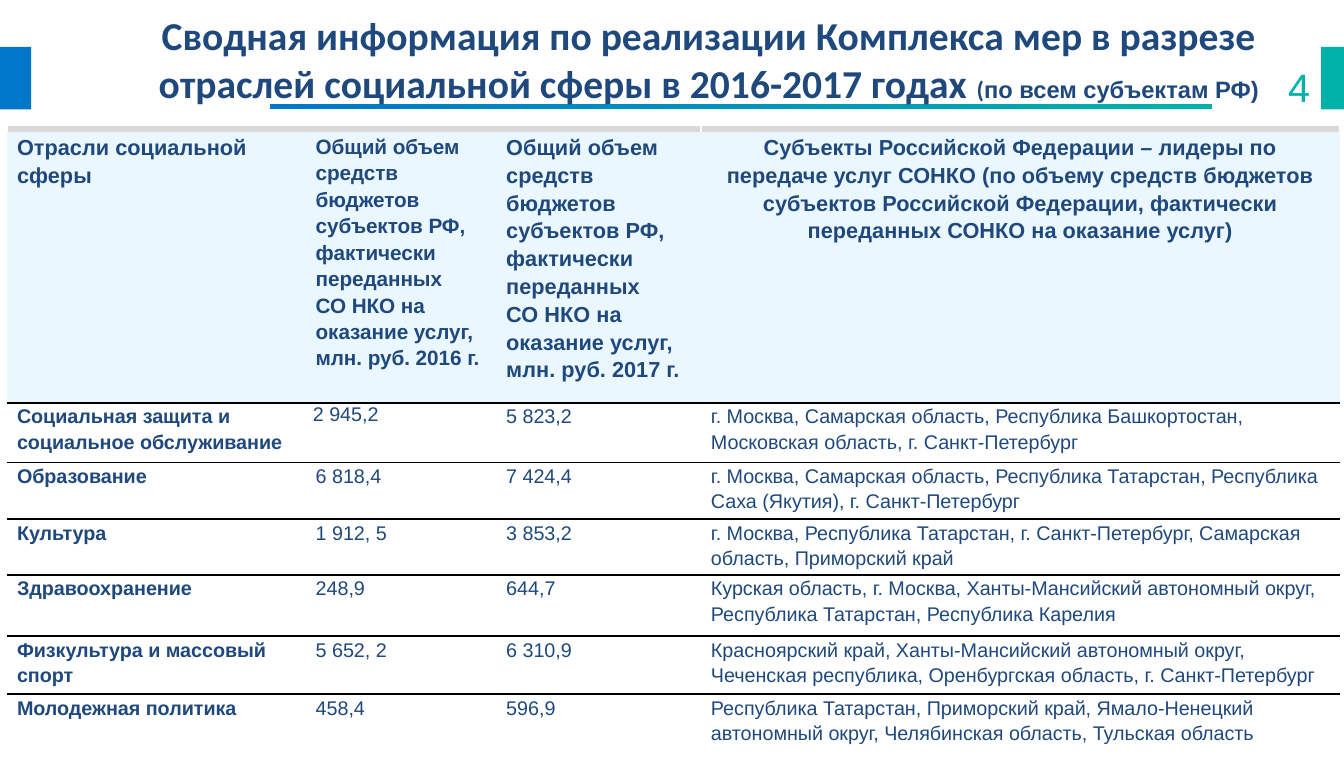
from lxml import etree
from pptx import Presentation
from pptx.dml.color import RGBColor
from pptx.enum.shapes import MSO_SHAPE
from pptx.enum.text import PP_ALIGN
from pptx.oxml.ns import qn
from pptx.util import Inches, Pt

RECT = MSO_SHAPE.RECTANGLE
LEFT, CENTER, RIGHT = PP_ALIGN.LEFT, PP_ALIGN.CENTER, PP_ALIGN.RIGHT
NAVY, BLUE, TEAL = "1F497D", "0077C8", "00B2A9"
WHITE, BLACK, GREY, PALE = "FFFFFF", "000000", "D9D9D9", "EBF7FF"
NO_STYLE = "{2D5ABB26-0587-4C30-8999-92F81FD0307C}"


def color(value):
    return RGBColor.from_string(value)


def border(cell, *sides):
    """Draw 1 pt cell borders; sides are (tag, colour) in the order L, R, T, B."""
    tcPr = cell._tc.get_or_add_tcPr()
    for i, (tag, value) in enumerate(sides):
        ln = etree.Element(qn(f"a:{tag}"), w=str(Pt(1)))
        fill = etree.SubElement(ln, qn("a:solidFill"))
        etree.SubElement(fill, qn("a:srgbClr"), val=value)
        tcPr.insert(i, ln)


prs = Presentation()
prs.slide_width, prs.slide_height = Inches(9.45), Inches(5.32)
s = prs.slides.add_slide(prs.slide_layouts[6])

# Side marks and the gradient rule under the title
bars = [(0, 0.33, 0.22, 0.44, BLUE), (9.29, 0.33, 0.16, 0.44, TEAL),
        (1.9, 0.73, 6.62, 0.04, None)]
for x, y, w, h, fill in bars:
    sp = s.shapes.add_shape(RECT, Inches(x), Inches(y), Inches(w), Inches(h))
    sp.shadow.inherit = False
    sp.line.fill.background()
    if fill:
        sp.fill.solid()
        sp.fill.fore_color.rgb = color(fill)
    else:
        sp.fill.gradient()
        sp.fill.gradient_angle = 0
        for stop, position, value in zip(sp.fill.gradient_stops, (0, 1), (BLUE, TEAL)):
            stop.position = position
            stop.color.rgb = color(value)

# Table
FUNDS = "Общий объем средств бюджетов субъектов РФ, фактически переданных \vСО НКО на оказание услуг,"
header = [
    "Отрасли социальной сферы",
    f"{FUNDS}\nмлн. руб. 2016 г.",
    f"{FUNDS}\nмлн. руб. 2017 г.",
    "Субъекты Российской Федерации – лидеры по передаче услуг СОНКО (по объему средств бюджетов "
    "субъектов Российской Федерации, фактически переданных СОНКО на оказание услуг)",
]
sectors = [
    ("Социальная защита и социальное обслуживание", "2 945,2", "5 823,2",
     "г. Москва, Самарская область, Республика Башкортостан, Московская область, г. Санкт-Петербург"),
    ("Образование", "6 818,4", "7 424,4",
     "г. Москва, Самарская область, Республика Татарстан, Республика Саха (Якутия), г. Санкт-Петербург"),
    ("Культура", "1 912, 5", "3 853,2",
     "г. Москва, Республика Татарстан, г. Санкт-Петербург, Самарская область, Приморский край"),
    ("Здравоохранение", "248,9", "644,7",
     "Курская область, г. Москва, Ханты-Мансийский автономный округ, Республика Татарстан, "
     "Республика Карелия"),
    ("Физкультура и массовый спорт", "5 652, 2", "6 310,9",
     "Красноярский край, Ханты-Мансийский автономный округ, Чеченская республика, "
     "Оренбургская область, г. Санкт-Петербург"),
    ("Молодежная политика", "458,4", "596,9",
     "Республика Татарстан, Приморский край, Ямало-Ненецкий автономный округ, "
     "Челябинская область, Тульская область"),
]
widths = [2.1, 1.34, 1.44, 4.49]
heights = [0.05, 1.9, 0.42, 0.4, 0.39, 0.43, 0.41, 0.39]
frame = s.shapes.add_table(len(heights), len(widths), Inches(0.05), Inches(0.88),
                           Inches(sum(widths)), Inches(sum(heights)))
table = frame.table
table.first_row = table.horz_banding = False
table._tbl.tblPr.find(qn("a:tableStyleId")).text = NO_STYLE
for column, w in zip(table.columns, widths):
    column.width = Inches(w)
for row, h in zip(table.rows, heights):
    row.height = Inches(h)

# Thin grey strip on top
for cell in table.rows[0].cells:
    cell.margin_left = cell.margin_right = cell.margin_top = cell.margin_bottom = 0
    cell.fill.solid()
    cell.fill.fore_color.rgb = color(GREY)
    border(cell, ("lnL", WHITE), ("lnR", WHITE), ("lnT", WHITE))
    etree.SubElement(cell.text_frame.paragraphs[0]._p, qn("a:endParaRPr"), sz="100")
table.cell(0, 0).merge(table.cell(0, 2))

for i, texts in enumerate([header] + sectors, start=1):
    is_header = i == 1
    for j, text in enumerate(texts):
        cell = table.cell(i, j)
        cell.margin_left = cell.margin_right = Inches(0.07)
        cell.margin_top = cell.margin_bottom = 0
        cell.fill.solid()
        cell.fill.fore_color.rgb = color(PALE if is_header else WHITE)
        if i < len(sectors) + 1:
            border(cell, ("lnB", BLACK))
        else:
            border(cell, ("lnT", BLACK))
        size = (10.5 if j == 1 else 11) if is_header else 10
        cell.text_frame.text = text
        for p in cell.text_frame.paragraphs:
            p.line_spacing = 1.15
            p.alignment = CENTER if is_header and j == 3 else LEFT
            for br in p._p.findall(qn("a:br")):
                etree.SubElement(br, qn("a:rPr"), sz=str(int(size * 100)))
            for r in p.runs:
                r.font.name = "Arial"
                r.font.size = Pt(size)
                r.font.bold = is_header or j == 0
                r.font.color.rgb = color(NAVY)

# The first 2016 figure sits slightly higher and further left
first_figure = table.cell(2, 1)
first_figure.margin_left = Inches(0.05)
first_figure.margin_top = Inches(0.01)
first_figure.text_frame.paragraphs[0].line_spacing = 1.0

# Slide number and title: (text, size, font, colour, bold) runs
labels = [
    ((8.87, 0.39, 0.44, 0.28), RIGHT, [("4", 20, "Arial", TEAL, False)]),
    ((0.91, 0.03, 8.15, 0.77), CENTER, [
        ("Сводная информация по реализации Комплекса мер в разрезе отраслей социальной сферы "
         "в 2016-2017 годах ", 20, "Calibri", NAVY, True),
        ("(", 12, "Calibri", NAVY, True),
        ("по всем субъектам РФ)", 12, "Arial", NAVY, True)]),
]
for box, align, runs in labels:
    tf = s.shapes.add_textbox(*map(Inches, box)).text_frame
    tf.word_wrap = True
    p = tf.paragraphs[0]
    p.alignment = align
    for text, size, font, value, bold in runs:
        r = p.add_run()
        r.text = text
        r.font.size, r.font.name, r.font.bold = Pt(size), font, bold
        r.font.color.rgb = color(value)

prs.save("out.pptx")
